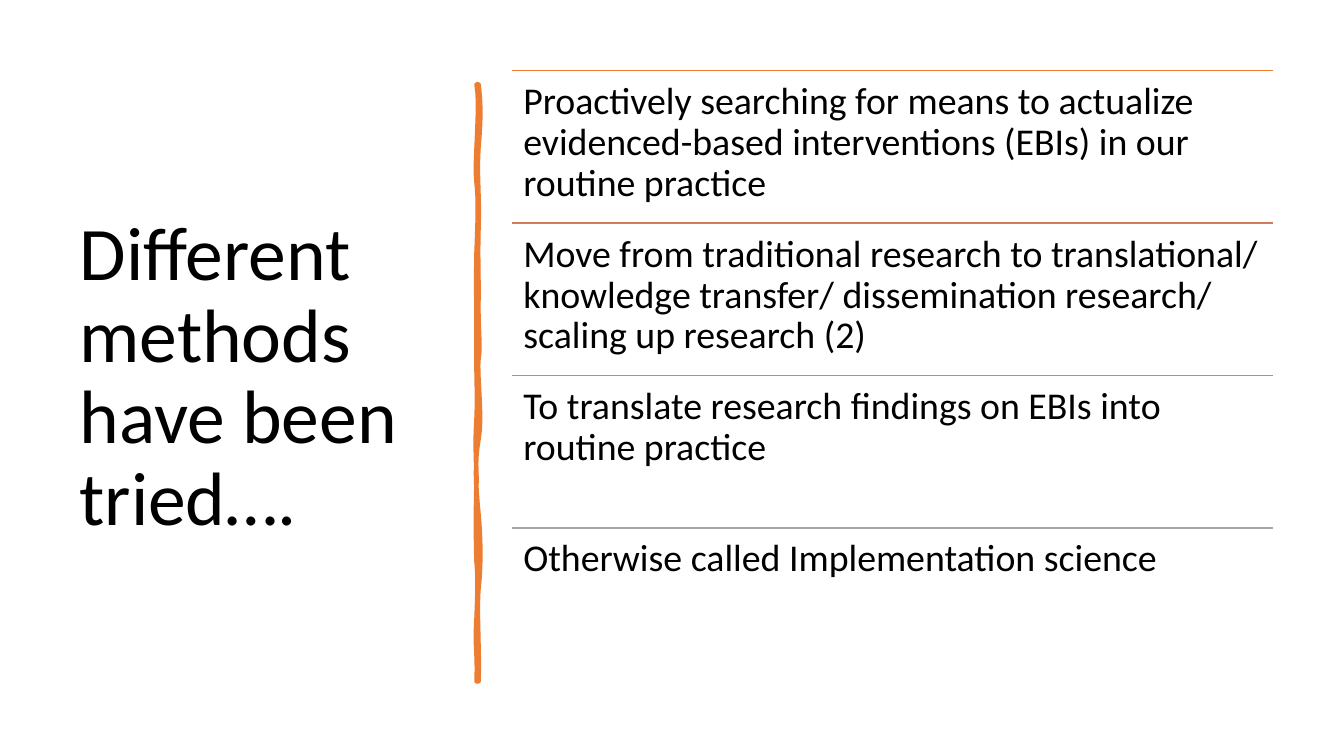
from pptx import Presentation
from pptx.dml.color import RGBColor
from pptx.enum.shapes import MSO_CONNECTOR
from pptx.enum.text import MSO_ANCHOR, MSO_AUTO_SIZE, PP_ALIGN
from pptx.oxml.ns import qn
from pptx.util import Cm, Pt
from lxml import etree

STRAIGHT = MSO_CONNECTOR.STRAIGHT
TOP, MIDDLE = MSO_ANCHOR.TOP, MSO_ANCHOR.MIDDLE
NO_FIT = MSO_AUTO_SIZE.NONE
LEFT = PP_ALIGN.LEFT
TITLE_ONLY = 5

COLOURS = {"text": "000000", "orange": "ED7D31", "copper": "D17B5C",
           "rose": "B98A82", "grey": "A5A5A5"}

METHODS = [
    ("orange", "Proactively searching for means to actualize evidenced-based "
               "interventions (EBIs) in our routine practice"),
    ("copper", "Move from traditional research to translational/ knowledge transfer/ "
               "dissemination research/ scaling up research (2)"),
    ("rose", "To translate research findings on EBIs into routine practice"),
    ("grey", "Otherwise called Implementation science"),
]
LIST_LEFT, LIST_TOP, LIST_WIDTH, ROW_HEIGHT = 12.9, 1.78, 19.18, 3.84

# Brush stroke edges in cm: two control points and the end height of each curve
STROKE_TOP = 2.13
RIGHT_EDGE, LEFT_EDGE = 12.06, 12.01
RIGHT_CURVES = [
    (12.12, 2.59, 12.12, 3.02, 3.71), (12.01, 4.39, 12.09, 4.95, 5.74),
    (12.04, 6.53, 12.06, 6.65, 7.47), (12.04, 8.26, 12.12, 8.69, 9.04),
    (12.01, 9.4, 12.17, 10.52, 11.07), (11.96, 11.61, 11.99, 12.29, 12.95),
    (12.12, 13.61, 12.12, 14.33, 14.83), (12.01, 15.32, 12.09, 16.51, 17.17),
]
LEFT_CURVES = [
    (12.04, 16.41, 11.96, 16.36, 15.57), (12.04, 14.81, 12.04, 14.48, 14.15),
    (11.99, 13.82, 11.99, 12.57, 12.12), (12.01, 11.66, 11.96, 11.3, 10.54),
    (12.04, 9.8, 11.99, 9.47, 8.51), (12.01, 7.57, 11.99, 7.14, 6.35),
    (12.04, 5.54, 12.06, 5.08, 4.6), (11.94, 4.14, 12.12, 2.64, STROKE_TOP),
]


def edge_points(x, y, curves, steps=8):
    """Sample a chain of cubic curves whose ends all lie at the same x."""
    points = [(x, y)]
    for x1, y1, x2, y2, end in curves:
        for step in range(1, steps + 1):
            t = step / steps
            u = 1 - t
            weights = (u ** 3, 3 * u * u * t, 3 * u * t * t, t ** 3)
            points.append(tuple(sum(w * v for w, v in zip(weights, values))
                                for values in ((x, x1, x2, x), (y, y1, y2, end))))
        y = end
    return points


class SlideBuilder:
    """Holds the text style and the page being filled."""

    def __init__(self, page, font="Calibri"):
        self.page = page
        self.font = font

    def colour(self, name):
        return RGBColor.from_string(COLOURS[name])

    def set_text(self, frame, text, size, anchor):
        frame.word_wrap = True
        frame.auto_size = NO_FIT
        frame.vertical_anchor = anchor
        para = frame.paragraphs[0]
        para.text = text
        para.alignment = LEFT
        para.line_spacing = 0.9
        para.font.name = self.font
        para.font.size = Pt(size)
        para.font.color.rgb = self.colour("text")

    def title(self, text, left, top, width, height):
        box = self.page.shapes.title
        box.left, box.top, box.width, box.height = map(Cm, (left, top, width, height))
        self.set_text(box.text_frame, text, 54, MIDDLE)

    def text(self, text, left, top, width, height):
        box = self.page.shapes.add_textbox(*map(Cm, (left, top, width, height)))
        frame = box.text_frame
        frame.margin_left = frame.margin_right = Cm(0.29)
        frame.margin_top = frame.margin_bottom = Cm(0.29)
        self.set_text(frame, text, 27, TOP)

    def rule(self, left, top, width, colour):
        line = self.page.shapes.add_connector(
            STRAIGHT, *map(Cm, (left, top, left + width, top)))
        line.line.color.rgb = self.colour(colour)
        line.line.width = Pt(1)
        etree.SubElement(line._element.spPr, qn("a:effectLst"))

    def brush_stroke(self, points, colour):
        start, *rest = [(Cm(x), Cm(y)) for x, y in points]
        builder = self.page.shapes.build_freeform(*start)
        builder.add_line_segments(rest, close=True)
        stroke = builder.convert_to_shape()
        stroke.shadow.inherit = False
        stroke.fill.solid()
        stroke.fill.fore_color.rgb = self.colour(colour)
        stroke.line.color.rgb = self.colour(colour)
        stroke.line.width = Pt(3.25)
        outline = stroke._element.spPr.find(qn("a:ln"))
        etree.SubElement(outline, qn("a:round"))


def main():
    deck = Presentation()
    deck.slide_width, deck.slide_height = Cm(33.87), Cm(19.05)
    slide = SlideBuilder(deck.slides.add_slide(deck.slide_layouts[TITLE_ONLY]))

    slide.title("Different methods have been tried….", 1.75, 1.78, 9.5, 15.52)
    stroke_bottom = RIGHT_CURVES[-1][-1]
    slide.brush_stroke(edge_points(RIGHT_EDGE, STROKE_TOP, RIGHT_CURVES)
                       + edge_points(LEFT_EDGE, stroke_bottom, LEFT_CURVES), "orange")
    for row, (colour, method) in enumerate(METHODS):
        top = LIST_TOP + row * ROW_HEIGHT
        slide.rule(LIST_LEFT, top, LIST_WIDTH, colour)
        slide.text(method, LIST_LEFT, top, LIST_WIDTH, ROW_HEIGHT)

    deck.save("out.pptx")


if __name__ == "__main__":
    main()
